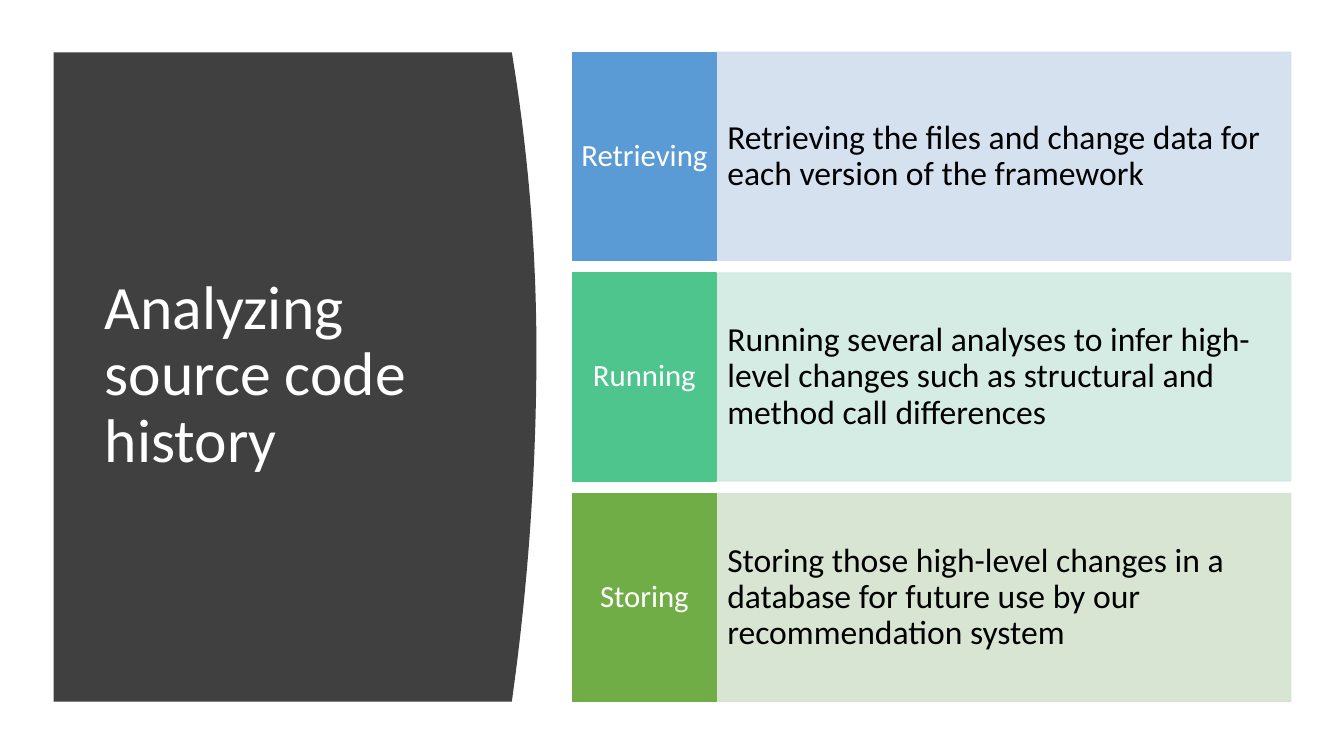
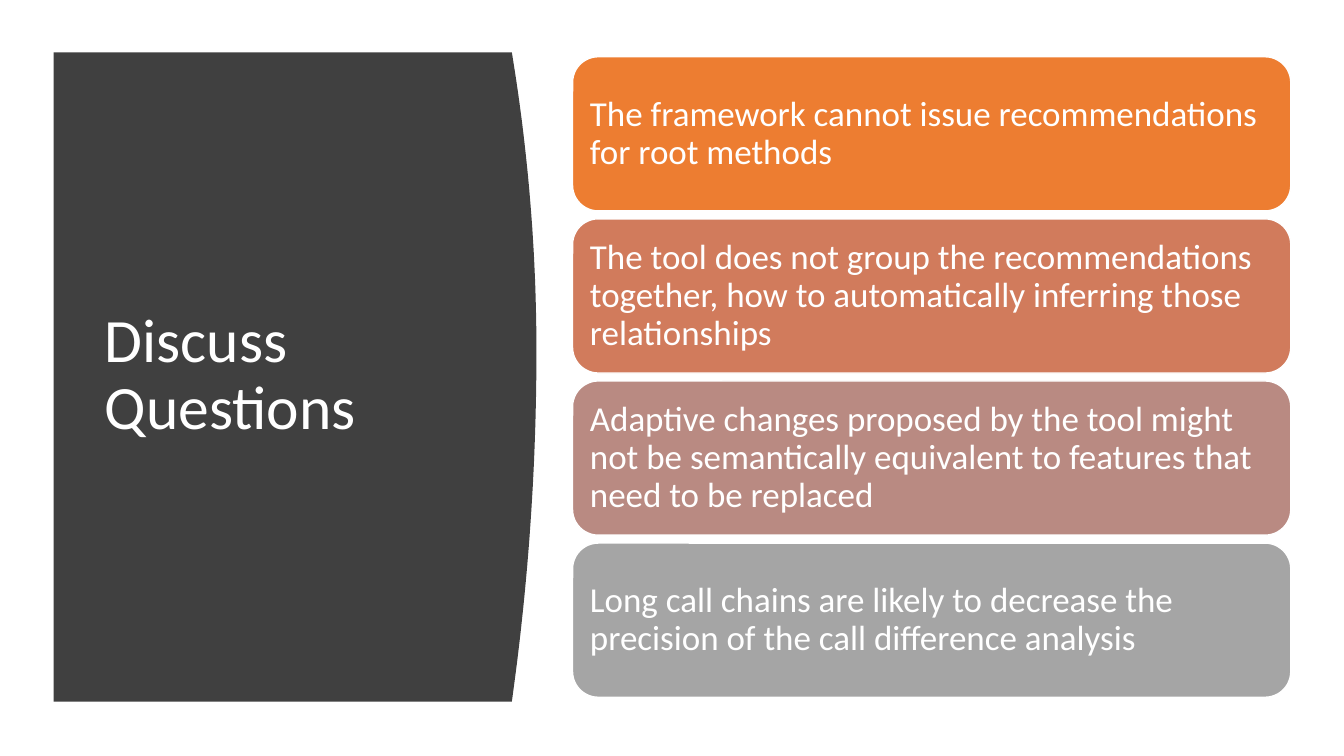
from collections import namedtuple

from lxml import etree
from pptx import Presentation
from pptx.dml.color import RGBColor
from pptx.enum.shapes import MSO_SHAPE as Preset
from pptx.enum.text import MSO_ANCHOR as Anchor, PP_ALIGN as Align
from pptx.oxml.ns import qn
from pptx.util import Cm, Pt

Box = namedtuple("Box", "left top width height")

FONT = "Calibri"
WHITE = RGBColor(0xFF, 0xFF, 0xFF)
BLACK = RGBColor(0x00, 0x00, 0x00)
CHARCOAL = RGBColor(0x40, 0x40, 0x40)
BLUE = RGBColor(0x5B, 0x9B, 0xD5)
PALE_BLUE = RGBColor(0xD2, 0xDE, 0xEF)
MINT = RGBColor(0x4D, 0xC5, 0x8D)
PALE_MINT = RGBColor(0xD0, 0xEA, 0xE1)
GREEN = RGBColor(0x70, 0xAD, 0x47)
PALE_GREEN = RGBColor(0xD5, 0xE3, 0xCF)
ORANGE = RGBColor(0xED, 0x7D, 0x31)
TERRACOTTA = RGBColor(0xD1, 0x7B, 0x5C)
DUSTY_ROSE = RGBColor(0xB9, 0x8A, 0x82)
GREY = RGBColor(0xA5, 0xA5, 0xA5)

SLIDE_WIDTH, SLIDE_HEIGHT = Cm(33.87), Cm(19.05)
TITLE_PANEL = Box(Cm(1.35), Cm(1.32), Cm(12.17), Cm(16.36))
CONTENT = Box(Cm(14.43), Cm(1.32), Cm(18.1), Cm(16.36))

STEPS = [
    ("Retrieving", BLUE, PALE_BLUE,
     "Retrieving the files and change data for each version of the framework"),
    ("Running", MINT, PALE_MINT,
     "Running several analyses to infer high-level changes such as structural "
     "and method call differences"),
    ("Storing", GREEN, PALE_GREEN,
     "Storing those high-level changes in a database for future use by our "
     "recommendation system"),
]
QUESTIONS = [
    (ORANGE, "The framework cannot issue recommendations for root methods"),
    (TERRACOTTA, "The tool does not group the recommendations together, how to "
                 "automatically inferring those relationships"),
    (DUSTY_ROSE, "Adaptive changes proposed by the tool might not be semantically "
                 "equivalent to features that need to be replaced"),
    (GREY, "Long call chains are likely to decrease the precision of the call "
           "difference analysis"),
]


def split_rows(box, count, gap):
    """Divide a box into equal rows with a fixed gap between them."""
    height = (box.height - gap * (count - 1)) // count
    return [box._replace(top=box.top + i * (height + gap), height=height)
            for i in range(count)]


def write(shape, text, size, color, align=Align.LEFT, inset=Cm(0.25)):
    frame = shape.text_frame
    frame.text = text
    frame.word_wrap = True
    frame.vertical_anchor = Anchor.MIDDLE
    frame.margin_left = frame.margin_right = inset
    paragraph = frame.paragraphs[0]
    paragraph.alignment = align
    paragraph.line_spacing = 0.9
    font = paragraph.runs[0].font
    font.name, font.size, font.color.rgb = FONT, Pt(size), color


def add_block(slide, preset, box, fill, outline):
    block = slide.shapes.add_shape(preset, *box)
    block.shadow.inherit = False
    block.fill.solid()
    block.fill.fore_color.rgb = fill
    block.line.color.rgb = outline
    block.line.width = Pt(1)
    return block


def set_opacity(shape, percent):
    for color in shape.element.spPr.iter(qn("a:srgbClr")):
        etree.SubElement(color, qn("a:alpha")).set("val", str(percent * 1000))


def add_title_panel(slide, box, title):
    """Dark panel with a bulging right edge, holding the slide title."""
    bulge, peak, steps = Cm(0.62), 0.46, 48
    edge = []
    for i in range(steps + 1):
        down = i / steps
        reach = peak if down < peak else 1 - peak
        inward = bulge * ((down - peak) / reach) ** 2
        edge.append((round(box.left + box.width - inward),
                     round(box.top + box.height * down)))
    outline = slide.shapes.build_freeform(box.left, box.top)
    outline.add_line_segments(edge + [(box.left, box.top + box.height)])
    panel = outline.convert_to_shape()
    panel.shadow.inherit = False
    panel.fill.solid()
    panel.fill.fore_color.rgb = CHARCOAL
    panel.line.fill.background()

    heading = slide.shapes.add_textbox(box.left + Cm(1.04), box.top + Cm(1.5),
                                       Cm(9.5), box.height - Cm(3.05))
    write(heading, title, 44, WHITE)


def add_steps(slide, box):
    for row, (name, strong, pale, detail) in zip(
            split_rows(box, len(STEPS), Cm(0.32)), STEPS):
        name_width = row.width // 5
        detail_box = row._replace(left=row.left + name_width,
                                  width=row.width - name_width)
        detail_block = add_block(slide, Preset.RECTANGLE, detail_box, pale, pale)
        set_opacity(detail_block, 90)
        write(detail_block, detail, 24, BLACK, inset=Cm(0.28))
        name_block = add_block(slide, Preset.RECTANGLE,
                               row._replace(width=name_width), strong, strong)
        write(name_block, name, 22, WHITE, Align.CENTER, Cm(0.2))


def add_questions(slide, box):
    margin = Cm(0.11)
    stack = box._replace(top=box.top + margin, height=box.height - 2 * margin)
    for row, (color, question) in zip(
            split_rows(stack, len(QUESTIONS), Cm(0.2)), QUESTIONS):
        card = add_block(slide, Preset.ROUNDED_RECTANGLE, row, color, WHITE)
        write(card, question, 25, WHITE)


def main():
    deck = Presentation()
    deck.slide_width, deck.slide_height = SLIDE_WIDTH, SLIDE_HEIGHT
    for title, add_content in [("Analyzing source code history", add_steps),
                               ("Discuss Questions", add_questions)]:
        slide = deck.slides.add_slide(deck.slide_layouts[6])
        add_title_panel(slide, TITLE_PANEL, title)
        add_content(slide, CONTENT)
    deck.save("out.pptx")


if __name__ == "__main__":
    main()
